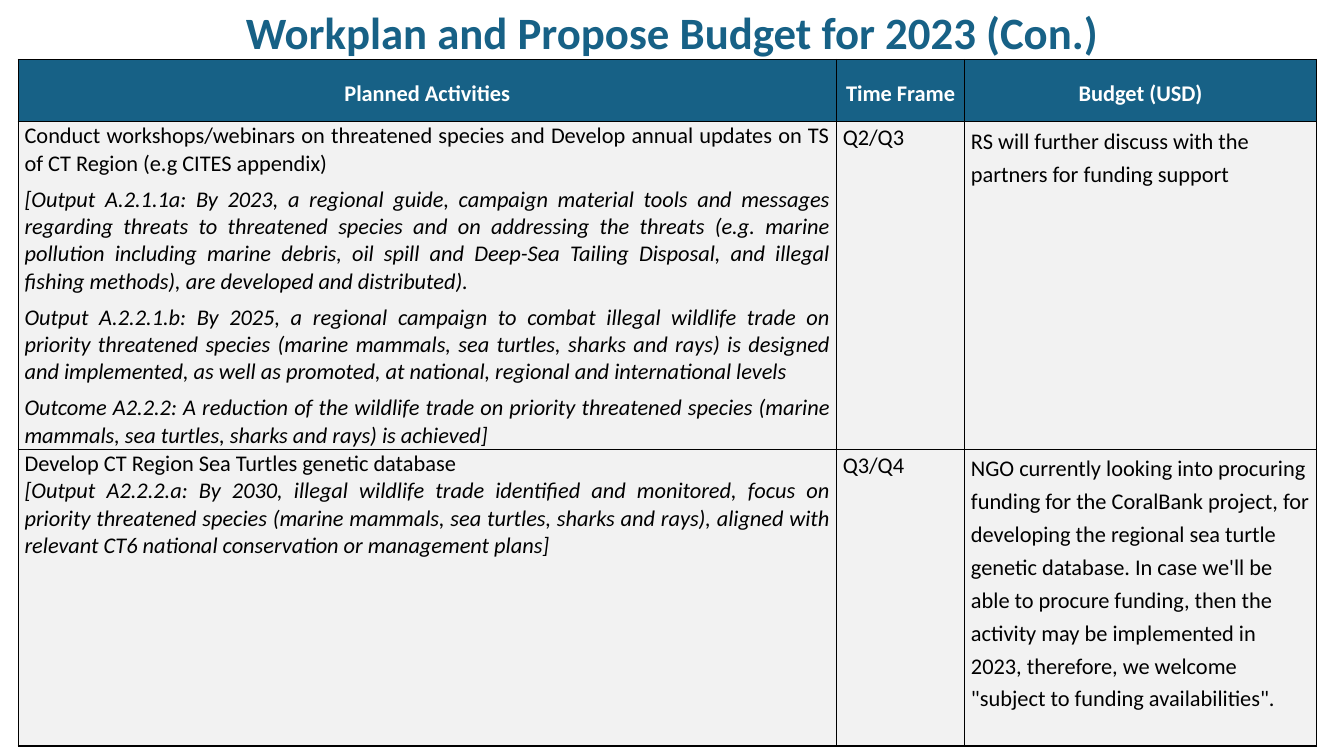
import pptx
import pptx.util
import pptx.dml.color
import pptx.enum.text
import pptx.oxml
import pptx.oxml.ns
from dataclasses import dataclass

Cm = pptx.util.Cm
Pt = pptx.util.Pt
ALIGN = pptx.enum.text.PP_ALIGN
ANCHOR = pptx.enum.text.MSO_ANCHOR

# Content: a row holds cells, a cell holds paragraphs of (text, style)
TITLE = "Workplan and Propose Budget for 2023 (Con.)"
HEADINGS = ["Planned Activities", "Time Frame", "Budget (USD)"]
ACTIVITIES = [
    [
        [
            ("Conduct workshops/webinars on threatened species and Develop annual updates on TS of CT Region "
             "(e.g CITES appendix)", "activity"),
            ("[Output A.2.1.1a: By 2023, a regional guide, campaign material tools and messages regarding threats "
             "to threatened species and on addressing the threats (e.g. marine pollution including marine debris, "
             "oil spill and Deep-Sea Tailing Disposal, and illegal fishing methods), are developed and "
             "distributed).", "output"),
            ("Output A.2.2.1.b: By 2025, a regional campaign to combat illegal wildlife trade on priority "
             "threatened species (marine mammals, sea turtles, sharks and rays) is designed and implemented, as "
             "well as promoted, at national, regional and international levels", "output"),
            ("Outcome A2.2.2: A reduction of the wildlife trade on priority threatened species (marine mammals, "
             "sea turtles, sharks and rays) is achieved]", "output"),
        ],
        [("Q2/Q3", "quarter")],
        [("RS will further discuss with the partners for funding support", "budget")],
    ],
    [
        [
            ("Develop CT Region Sea Turtles genetic database", "short activity"),
            ("[Output A2.2.2.a: By 2030, illegal wildlife trade identified and monitored, focus on priority "
             "threatened species (marine mammals, sea turtles, sharks and rays), aligned with relevant CT6 "
             "national conservation or management plans]", "short output"),
        ],
        [("Q3/Q4", "quarter")],
        [("NGO currently looking into procuring funding for the CoralBank project, for developing the regional sea "
          "turtle genetic database. In case we'll be able to procure funding, then the activity may be "
          "implemented in 2023, therefore, we welcome \"subject to funding availabilities\".", "budget")],
    ],
]


@dataclass(frozen=True)
class Theme:
    font: str = "Calibri"
    blue: str = "176186"
    grey: str = "F2F2F2"
    white: str = "FFFFFF"
    black: str = "000000"
    title_size: int = 32
    table_size: int = 16
    border: int = 1


THEME = Theme()

# Paragraph styles: alignment, line spacing, space after, size, colour, bold, italic
SIZE = THEME.table_size
STYLES = {
    "title": (ALIGN.CENTER, 1.07, 8, THEME.title_size, THEME.blue, True, False),
    "heading": (ALIGN.CENTER, 1.2, 6, SIZE, THEME.white, True, False),
    "activity": (ALIGN.JUSTIFY, 1.0, 6, SIZE, THEME.black, False, False),
    "output": (ALIGN.JUSTIFY, 1.0, 6, SIZE, THEME.black, False, True),
    "short activity": (ALIGN.LEFT, 1.0, 0, SIZE, THEME.black, False, False),
    "short output": (ALIGN.JUSTIFY, 1.0, 0, SIZE, THEME.black, False, True),
    "quarter": (ALIGN.LEFT, 1.07, 0, SIZE, THEME.black, False, False),
    "budget": (ALIGN.LEFT, 1.2, 6, SIZE, THEME.black, False, False),
}

# Layout in centimetres; each row is tall enough for its longest cell
SLIDE_SIZE = (33.87, 19.05)
TITLE_BOX = (2.34, 0, 29.21, 1.5)
TABLE_LEFT, TABLE_TOP = 0.46, 1.5
COLUMN_WIDTHS = [20.62, 3.23, 8.87]
ROW_HEIGHTS = [1.57, 8.25, 7.48]
CELL_SIDE, CELL_TOP = 0.16, 0.02


def rgb(colour):
    return pptx.dml.color.RGBColor.from_string(colour)


def write(frame, paragraphs):
    for number, (text, style) in enumerate(paragraphs):
        align, spacing, after, size, colour, bold, italic = STYLES[style]
        paragraph = frame.paragraphs[0] if number == 0 else frame.add_paragraph()
        paragraph.alignment = align
        paragraph.line_spacing = spacing
        paragraph.space_before = Pt(0)
        paragraph.space_after = Pt(after)
        run = paragraph.add_run()
        run.text = text
        run.font.name = THEME.font
        run.font.size = Pt(size)
        run.font.bold = bold
        run.font.italic = italic
        run.font.color.rgb = rgb(colour)


def add_borders(cell):
    properties = cell._tc.get_or_add_tcPr()
    for position, side in enumerate(("lnL", "lnR", "lnT", "lnB")):
        properties.insert(position, pptx.oxml.parse_xml(
            f'<a:{side} {pptx.oxml.ns.nsdecls("a")} w="{Pt(THEME.border)}">'
            f'<a:solidFill><a:srgbClr val="{THEME.black}"/></a:solidFill></a:{side}>'))


def add_title(slide):
    frame = slide.shapes.add_textbox(*map(Cm, TITLE_BOX)).text_frame
    frame.word_wrap = True
    frame.vertical_anchor = ANCHOR.MIDDLE
    frame.margin_top = frame.margin_bottom = 0
    write(frame, [(TITLE, "title")])


def add_workplan(slide):
    rows = [[[(heading, "heading")] for heading in HEADINGS]] + ACTIVITIES
    workplan = slide.shapes.add_table(
        len(rows), len(HEADINGS), Cm(TABLE_LEFT), Cm(TABLE_TOP),
        Cm(sum(COLUMN_WIDTHS)), Cm(sum(ROW_HEIGHTS))).table
    workplan.first_row = workplan.horz_banding = False
    for column, width in zip(workplan.columns, COLUMN_WIDTHS):
        column.width = Cm(width)
    for row, height in zip(workplan.rows, ROW_HEIGHTS):
        row.height = Cm(height)

    for r, row in enumerate(rows):
        for c, paragraphs in enumerate(row):
            cell = workplan.cell(r, c)
            cell.margin_left = cell.margin_right = Cm(CELL_SIDE)
            cell.margin_top, cell.margin_bottom = Cm(CELL_TOP), 0
            cell.vertical_anchor = ANCHOR.TOP if r else ANCHOR.MIDDLE
            cell.fill.solid()
            cell.fill.fore_color.rgb = rgb(THEME.grey if r else THEME.blue)
            add_borders(cell)
            write(cell.text_frame, paragraphs)


def main():
    deck = pptx.Presentation()
    deck.slide_width, deck.slide_height = map(Cm, SLIDE_SIZE)
    slide = deck.slides.add_slide(deck.slide_layouts[6])
    add_title(slide)
    add_workplan(slide)
    deck.save("out.pptx")


if __name__ == "__main__":
    main()
